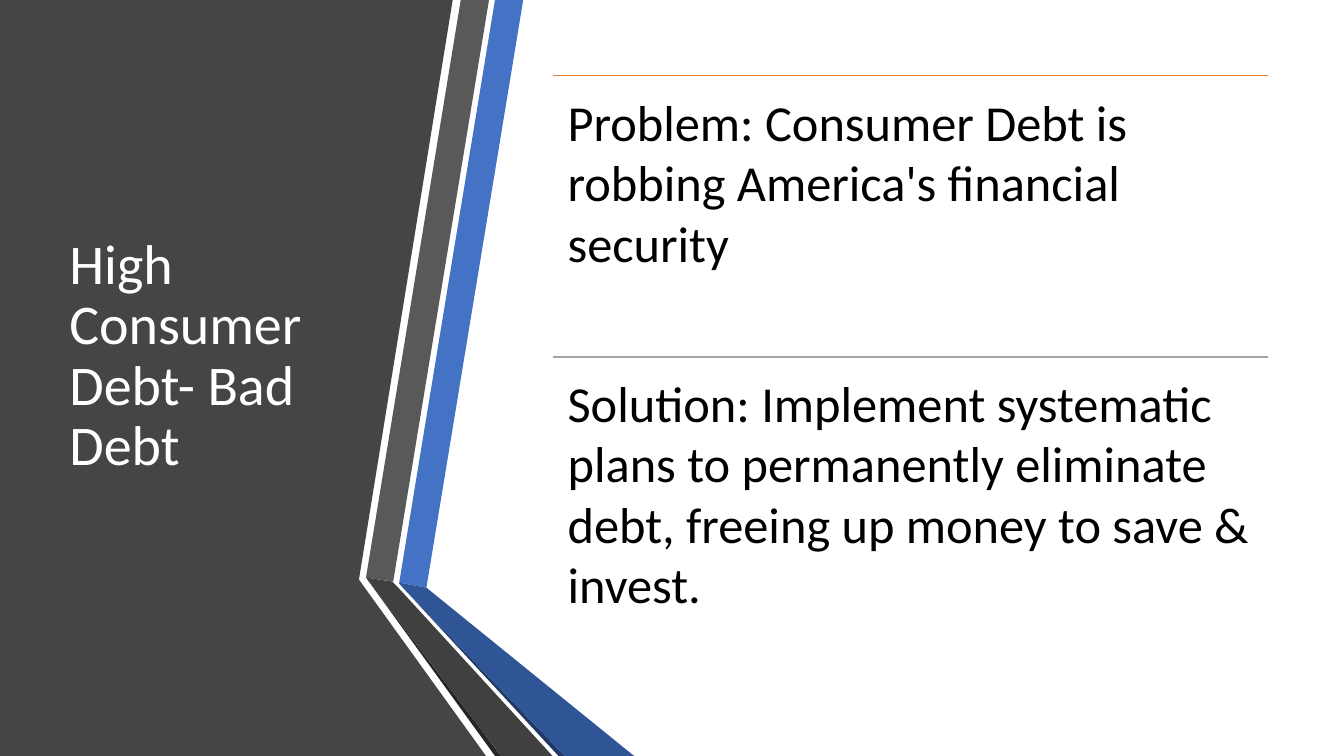
from pptx import Presentation
from pptx.dml.color import RGBColor
from pptx.enum.shapes import MSO_CONNECTOR
from pptx.enum.text import MSO_ANCHOR, PP_ALIGN
from pptx.util import Inches, Pt
from lxml.etree import SubElement
from pptx.oxml.ns import qn

WHITE = RGBColor(0xFF, 0xFF, 0xFF)
BLACK = RGBColor(0x00, 0x00, 0x00)
PANEL_GRAY = RGBColor(0x45, 0x45, 0x45)
BLUE = RGBColor(0x44, 0x72, 0xC4)
BLUE_SHADE = RGBColor(0x2F, 0x55, 0x97)
BLUE_EDGE = RGBColor(0x20, 0x38, 0x64)
GRAY = RGBColor(0x59, 0x59, 0x59)
GRAY_SHADE = RGBColor(0x40, 0x40, 0x40)
GRAY_EDGE = RGBColor(0x26, 0x26, 0x26)
ORANGE_RULE = RGBColor(0xED, 0x7D, 0x31)
GRAY_RULE = RGBColor(0xA5, 0xA5, 0xA5)

deck = Presentation()
deck.slide_width = Inches(13.33)
deck.slide_height = Inches(7.5)
page = deck.slides.add_slide(deck.slide_layouts[6])


def add_outline(points, color):
    start, *rest = [(Inches(x), Inches(y)) for x, y in points]
    builder = page.shapes.build_freeform(*start)
    builder.add_line_segments(rest, close=True)
    shape = builder.convert_to_shape()
    shape.shadow.inherit = False
    shape.fill.solid()
    shape.fill.fore_color.rgb = color
    shape.line.fill.background()


def add_text(text, left, top, width, height, size, color):
    box = page.shapes.add_textbox(
        Inches(left), Inches(top), Inches(width), Inches(height))
    frame = box.text_frame
    frame.word_wrap = True
    frame.text = text
    para = frame.paragraphs[0]
    para.alignment = PP_ALIGN.LEFT
    font = para.runs[0].font
    font.name = "Calibri"
    font.size = Pt(size)
    font.color.rgb = color
    return frame


# Dark title panel and the folded ribbons beside it
add_outline([(0, 0), (4.49, 0), (3.56, 5.75), (4.82, 7.5), (0, 7.5)], PANEL_GRAY)
add_outline([(3.96, 5.78), (4.23, 5.83), (5.19, 0), (4.91, 0)], BLUE)
add_outline([(4.85, 0), (4.57, 0), (3.63, 5.73), (3.9, 5.77)], GRAY)
add_outline([(3.63, 5.73), (4.91, 7.5), (4.97, 7.5)], GRAY_EDGE)
add_outline([(3.96, 5.79), (5.54, 7.5), (5.6, 7.5)], BLUE_EDGE)
add_outline([(3.96, 5.78), (3.96, 5.79), (5.6, 7.5), (6.29, 7.5), (4.23, 5.83)],
            BLUE_SHADE)
add_outline([(5.48, 7.5), (3.95, 5.83), (3.89, 5.77), (3.63, 5.73), (4.97, 7.5)],
            GRAY_SHADE)

# Title
title = add_text("High Consumer Debt- Bad Debt", 0.59, 0.75, 3.04, 5.58, 40, WHITE)
title.vertical_anchor = MSO_ANCHOR.MIDDLE
title.paragraphs[0].line_spacing = 0.9

# Problem and solution, each under a thin rule
LEFT, TOP, WIDTH, ROW_HEIGHT = 5.48, 0.75, 7.1, 2.79
statements = [
    ("Problem: Consumer Debt is robbing America's financial security", ORANGE_RULE),
    ("Solution: Implement systematic plans to permanently eliminate debt, "
     "freeing up money to save & invest.", GRAY_RULE),
]
for row, (statement, rule_color) in enumerate(statements):
    top = TOP + row * ROW_HEIGHT
    rule = page.shapes.add_connector(
        MSO_CONNECTOR.STRAIGHT,
        Inches(LEFT), Inches(top), Inches(LEFT + WIDTH), Inches(top))
    rule.line.color.rgb = rule_color
    rule.line.width = Pt(1)
    # Drop the theme style and its shadow so that only the rule colour shows
    SubElement(rule._element.spPr, qn("a:effectLst"))
    rule._element.remove(rule._element.find(qn("p:style")))

    body = add_text(statement, LEFT, top, WIDTH, ROW_HEIGHT, 36, BLACK)
    body.margin_left = body.margin_right = Inches(0.15)
    body.margin_top = body.margin_bottom = Inches(0.15)

deck.save("out.pptx")
